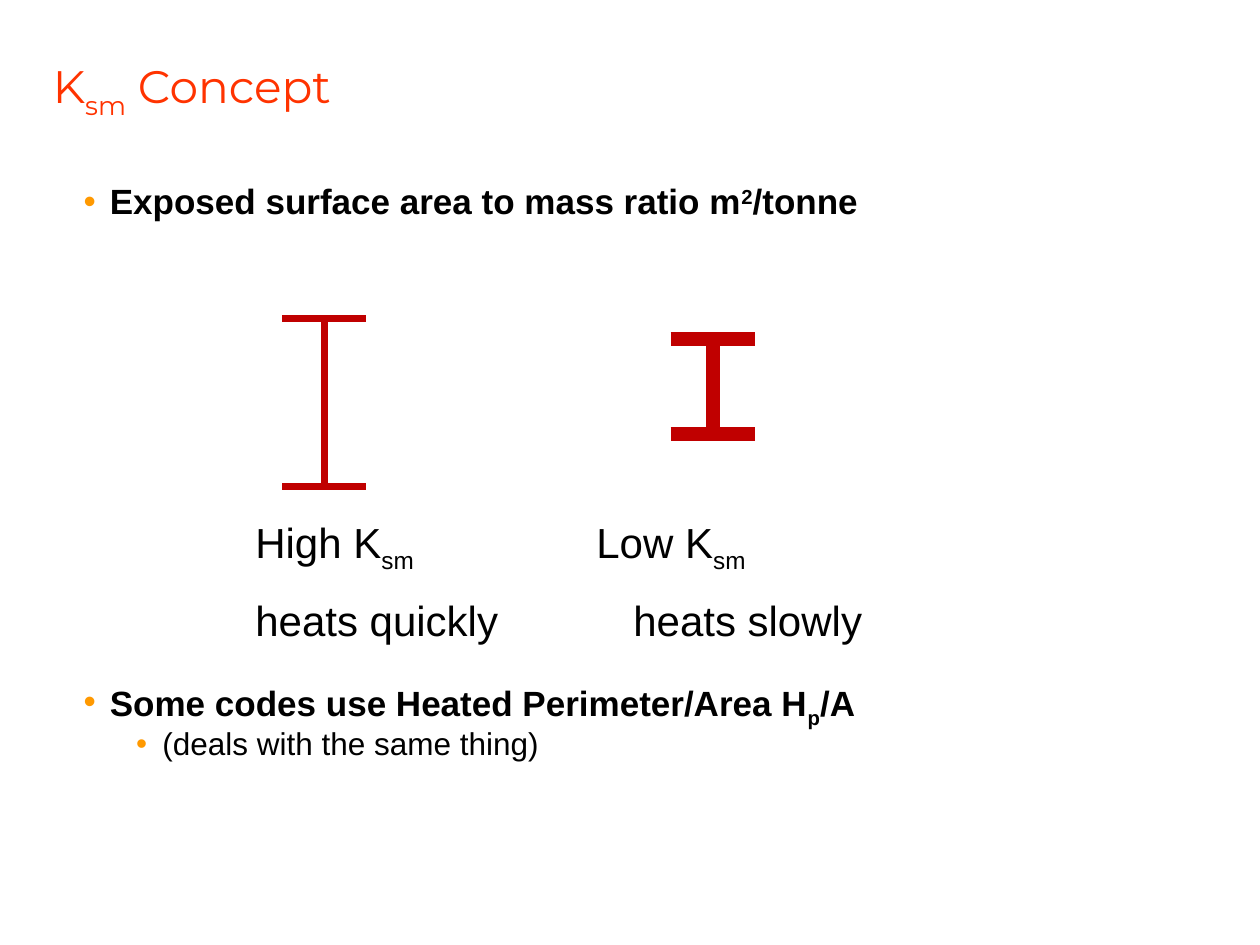
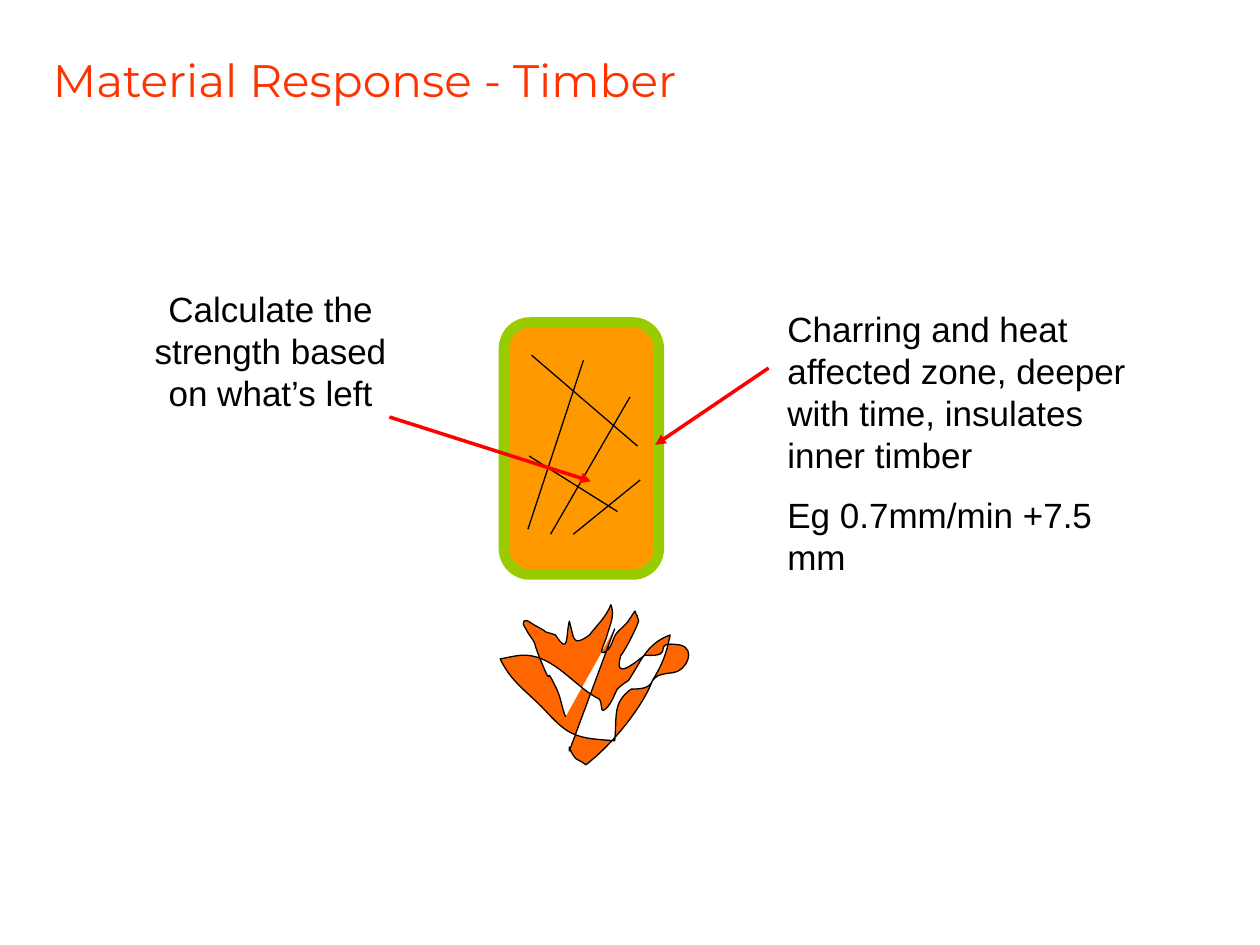
import dataclasses
from typing import NamedTuple

import lxml.etree
import pptx
import pptx.dml.color
import pptx.enum.shapes
import pptx.enum.text
import pptx.oxml.ns
import pptx.util

Pt = pptx.util.Pt
RGBColor = pptx.dml.color.RGBColor
Align = pptx.enum.text.PP_ALIGN
qn = pptx.oxml.ns.qn

# Shared look
TITLE_RED = RGBColor(0xFF, 0x33, 0x00)
BULLET_ORANGE = RGBColor(0xFF, 0x99, 0x00)
STEEL_RED = RGBColor(0xC0, 0x00, 0x00)
CHAR_GREEN = RGBColor(0x99, 0xCC, 0x00)
FLAME_ORANGE = RGBColor(0xFF, 0x66, 0x00)
ARROW_RED = RGBColor(0xFF, 0x00, 0x00)
BLACK = RGBColor(0, 0, 0)
TITLE_FONT = "Montserrat"
BODY_FONT = "Arial"
TITLE_SIZE = 26
SUBSCRIPT = -25
SUPERSCRIPT = 30


class Span(NamedTuple):
    text: str
    baseline: int = 0


class Box(NamedTuple):
    left: float
    top: float
    width: float
    height: float


class Line(NamedTuple):
    start: tuple[float, float]
    end: tuple[float, float]


class Beam(NamedTuple):
    left: float
    top: float
    height: float
    thickness: float


@dataclasses.dataclass
class Para:
    spans: list[Span]
    size: float = 20
    bold: bool = False
    color: RGBColor = BLACK
    font: str = BODY_FONT
    align: Align = Align.LEFT
    before: float = 0
    line_spacing: float = 1
    bullet_indent: float | None = None
    tab_stop: float | None = None


def add_bullet(properties, indent: float) -> None:
    """Hang an orange bullet 15 pt left of the text."""
    properties.set("marL", str(Pt(indent)))
    properties.set("indent", str(Pt(-15)))
    color = lxml.etree.SubElement(properties, qn("a:buClr"))
    lxml.etree.SubElement(color, qn("a:srgbClr"), val=str(BULLET_ORANGE))
    lxml.etree.SubElement(properties, qn("a:buFont"), typeface=BODY_FONT)
    lxml.etree.SubElement(properties, qn("a:buChar"), char="•")


def add_text(page, box: Box, paras: list[Para], inset: bool = True,
             anchor=pptx.enum.text.MSO_ANCHOR.TOP) -> None:
    frame = page.shapes.add_textbox(*map(Pt, box)).text_frame
    frame.word_wrap = True
    frame.vertical_anchor = anchor
    if not inset:
        frame.margin_left = frame.margin_right = 0
        frame.margin_top = frame.margin_bottom = 0
    for index, item in enumerate(paras):
        para = frame.add_paragraph() if index else frame.paragraphs[0]
        para.alignment = item.align
        para.line_spacing = item.line_spacing
        para.space_before = Pt(item.before)
        properties = para._p.get_or_add_pPr()
        if item.bullet_indent is not None:
            add_bullet(properties, item.bullet_indent)
        if item.tab_stop is not None:
            tabs = lxml.etree.SubElement(properties, qn("a:tabLst"))
            lxml.etree.SubElement(tabs, qn("a:tab"), pos=str(Pt(item.tab_stop)), algn="l")
        para.font.name = item.font
        para.font.size = Pt(item.size)
        para.font.bold = item.bold
        para.font.color.rgb = item.color
        for span in item.spans:
            run = para.add_run()
            run.text = span.text
            if span.baseline:
                run._r.get_or_add_rPr().set("baseline", str(span.baseline * 1000))


def add_title(page, top: float, spans: list[Span]) -> None:
    title = Para(spans, size=TITLE_SIZE, color=TITLE_RED, font=TITLE_FONT)
    add_text(page, Box(30.2, top, 660, 31), [title], inset=False,
             anchor=pptx.enum.text.MSO_ANCHOR.MIDDLE)


def add_line(page, line: Line, color: RGBColor, width: float, arrow: bool = False) -> None:
    connector = page.shapes.add_connector(
        pptx.enum.shapes.MSO_CONNECTOR.STRAIGHT, *map(Pt, line.start + line.end))
    connector.line.color.rgb = color
    connector.line.width = Pt(width)
    if arrow:
        outline = connector.line._get_or_add_ln()
        lxml.etree.SubElement(outline, qn("a:tailEnd"), type="triangle")
    lxml.etree.SubElement(connector._element.spPr, qn("a:effectLst"))


def paint(shape, fill: RGBColor, line: RGBColor, width: float) -> None:
    shape.shadow.inherit = False
    shape.fill.solid()
    shape.fill.fore_color.rgb = fill
    shape.line.color.rgb = line
    shape.line.width = Pt(width)


def add_beam(page, beam: Beam) -> None:
    """Draw an I-section: two flanges joined by a central web."""
    flange = 48
    right, bottom = beam.left + flange, beam.top + beam.height
    web = beam.left + flange / 2
    for line in (Line((beam.left, beam.top), (right, beam.top)),
                 Line((beam.left, bottom), (right, bottom)),
                 Line((web, beam.top), (web, bottom))):
        add_line(page, line, STEEL_RED, beam.thickness)


# Flame outline in steps of 0.72 pt: each curve is two control points and an end point
FLAME_UNIT = 0.72
FLAME_START = (52, 89)
FLAME_CURVES = [
    (49, 82, 48, 72, 44, 65), (34, 44, 43, 70, 33, 46), (23, 22, 32, 37, 22, 22),
    (21, 19, 17, 16, 19, 13), (21, 11, 25, 15, 27, 16), (46, 26, 26, 18, 44, 24),
    (55, 41, 52, 25, 55, 13), (59, 27, 57, 34, 71, 24), (77, 16, 84, 10, 88, 0),
    (91, 8, 88, 14, 85, 24), (84, 29, 78, 39, 82, 38), (89, 36, 89, 26, 93, 22),
    (104, 11, 99, 17, 107, 5), (108, 8, 110, 10, 110, 13), (109, 17, 99, 37, 96, 40),
    (89, 62, 108, 45, 115, 40), (142, 42, 117, 28, 143, 32), (156, 35, 148, 53, 137, 54),
    (111, 56, 130, 67, 104, 67), (89, 78, 93, 88, 91, 108), (81, 107, 67, 107, 57, 102),
    (48, 98, 39, 87, 33, 81), (19, 67, 9, 61, 0, 43), (6, 42, 13, 40, 19, 40),
    (43, 40, 60, 66, 79, 75), (81, 78, 80, 85, 82, 84), (88, 80, 90, 73, 93, 67),
    (96, 64, 99, 62, 102, 60), (112, 45, 116, 31, 135, 24), (132, 39, 129, 47, 121, 60),
    (113, 82, 87, 113, 68, 127), (66, 125, 63, 124, 60, 122), (54, 115, 55, 109, 55, 116),
]
FLAME_TIP = (91, 19)


def add_flame(page, left: float, top: float) -> None:
    """Lay out every point as a segment, then merge each three into a curve."""
    points = [FLAME_START]
    for curve in FLAME_CURVES:
        points += zip(curve[::2], curve[1::2])
    points.append(FLAME_TIP)
    scaled = [(Pt(x * FLAME_UNIT), Pt(y * FLAME_UNIT)) for x, y in points]
    builder = page.shapes.build_freeform(*scaled[0])
    builder.add_line_segments(scaled[1:], close=False)
    flame = builder.convert_to_shape(Pt(left), Pt(top))
    segments = list(flame._element.iter(qn("a:lnTo")))
    for index in range(0, 3 * len(FLAME_CURVES), 3):
        curve = lxml.etree.Element(qn("a:cubicBezTo"))
        segments[index].addprevious(curve)
        for segment in segments[index:index + 3]:
            curve.append(segment[0])
            segment.getparent().remove(segment)
    paint(flame, FLAME_ORANGE, BLACK, 0.75)


def build_concept_slide(page) -> None:
    sm = Span("sm", SUBSCRIPT)
    add_text(page, Box(47.8, 105.5, 556.5, 413), [
        Para([Span("Exposed surface area to mass ratio m"), Span("2", SUPERSCRIPT),
              Span("/tonne")], bold=True, line_spacing=0.9, bullet_indent=15),
        Para([Span("Some codes use Heated Perimeter/Area H"), Span("p", SUBSCRIPT),
              Span("/A")], bold=True, line_spacing=0.9, bullet_indent=15, before=262.7),
        Para([Span("(deals with the same thing)")], size=18, line_spacing=0.9,
             bullet_indent=45, before=2),
    ], inset=False)
    add_title(page, 35.6, [Span("K"), sm, Span(" Concept")])

    # Slender and stocky sections with their captions
    add_beam(page, Beam(161.3, 182, 96, 4))
    add_text(page, Box(138.8, 291.6, 372, 79), [
        Para([Span("High K"), sm, Span("\tLow K"), sm], size=24, tab_stop=194.9),
        Para([Span("heats quickly\theats slowly")], size=24, before=12, tab_stop=216),
    ])
    add_beam(page, Beam(383.3, 193.8, 54.2, 8))


def build_timber_slide(page) -> None:
    # Timber section: sound core inside a charred edge
    timber = page.shapes.add_shape(pptx.enum.shapes.MSO_SHAPE.ROUNDED_RECTANGLE,
                                   *map(Pt, Box(288, 184.3, 88.5, 144)))
    timber.adjustments[0] = 0.167
    paint(timber, BULLET_ORANGE, CHAR_GREEN, 6)
    add_title(page, 29.9, [Span("Material Response - Timber")])

    grain = [
        Line((301.7, 302.4), (333.4, 205.9)),
        Line((314.6, 305.3), (360, 226.8)),
        Line((327.6, 305.3), (365.8, 274.3)),
        Line((302.4, 260.6), (352.8, 292.3)),
        Line((303.8, 203), (364.3, 254.9)),
    ]
    for line in grain:
        add_line(page, line, BLACK, 0.75)
    add_flame(page, 285.8, 345.6)

    # Notes with arrows
    add_text(page, Box(442.8, 172, 215.3, 163.4), [
        Para([Span("Charring and heat affected zone, deeper with time, "
                   "insulates inner timber")]),
        Para([Span("Eg 0.7mm/min +7.5 mm")], before=10.5),
    ])
    add_line(page, Line((439.2, 210.3), (374.4, 254.2)), ARROW_RED, 2, arrow=True)
    add_text(page, Box(77.6, 160.5, 154, 79), [
        Para([Span("Calculate the strength based on what’s left")], align=Align.CENTER)])
    add_line(page, Line((222.5, 238.3), (337.7, 275)), ARROW_RED, 2, arrow=True)


def main() -> None:
    deck = pptx.Presentation()
    deck.slide_width, deck.slide_height = Pt(720), Pt(540)
    blank = deck.slide_layouts[6]
    for build in (build_concept_slide, build_timber_slide):
        build(deck.slides.add_slide(blank))
    deck.save("out.pptx")


if __name__ == "__main__":
    main()
